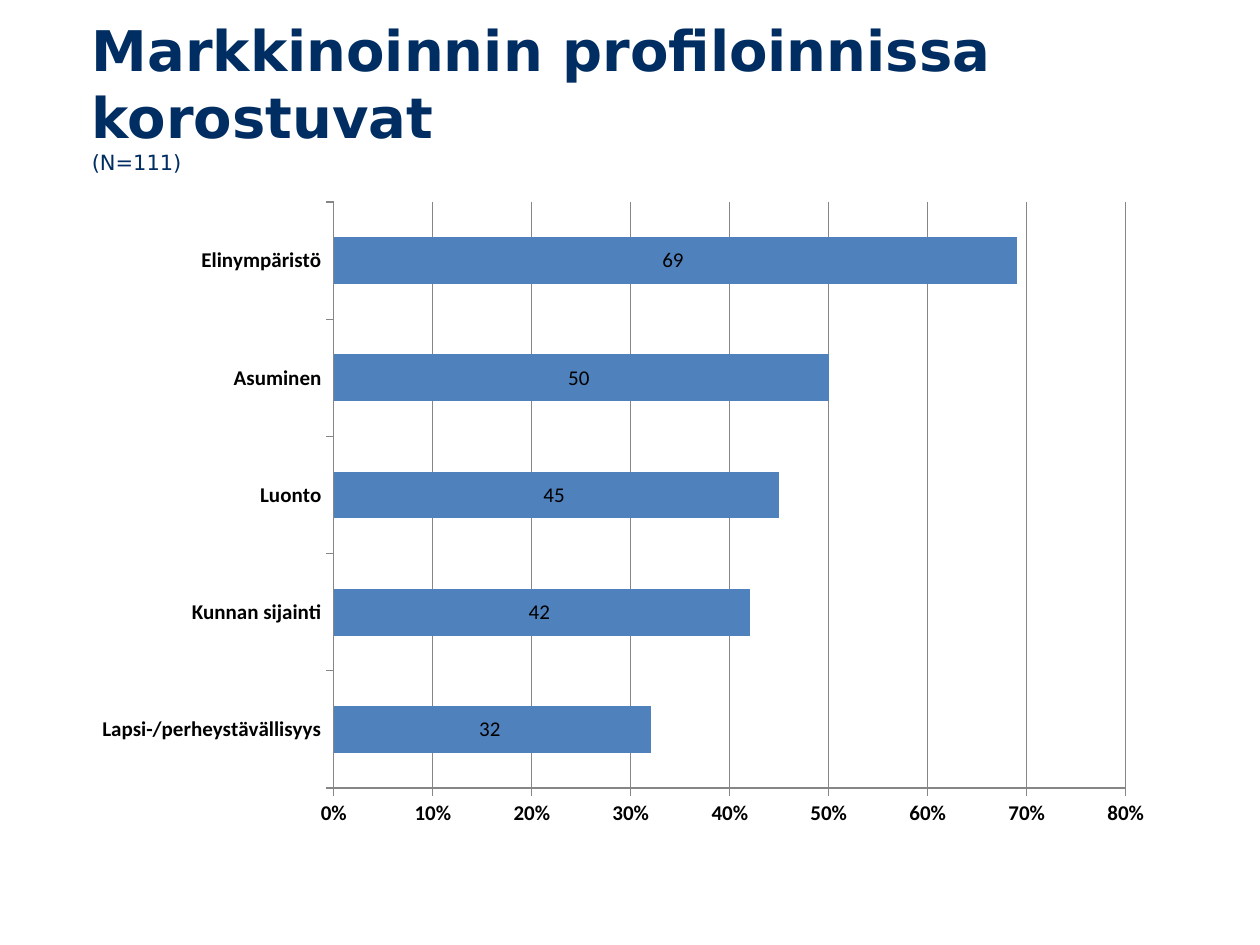
from lxml import etree
from pptx import Presentation
from pptx.chart.data import CategoryChartData as ChartData
from pptx.dml.color import RGBColor
from pptx.enum.chart import XL_CHART_TYPE as Kind
from pptx.enum.chart import XL_LABEL_POSITION as Place
from pptx.enum.chart import XL_TICK_MARK as Tick
from pptx.enum.text import MSO_ANCHOR as Anchor
from pptx.enum.text import MSO_AUTO_SIZE as Fit
from pptx.enum.text import PP_ALIGN as Align
from pptx.oxml.ns import qn
from pptx.util import Cm, Pt

TITLE = "Markkinoinnin profiloinnissa korostuvat"
NOTE = "(N=111)"
SHARES = [
    ("Lapsi-/perheystävällisyys", 0.32),
    ("Kunnan sijainti", 0.42),
    ("Luonto", 0.45),
    ("Asuminen", 0.5),
    ("Elinympäristö", 0.69),
]
PLOT = {"x": 0.23, "y": 0.02, "w": 0.73, "h": 0.9}

NAVY = RGBColor(0x00, 0x2D, 0x62)
BLUE = RGBColor(0x4F, 0x81, 0xBD)
GRAY = RGBColor(0x86, 0x86, 0x86)
BLACK = RGBColor(0x00, 0x00, 0x00)


def style(font, size=12, bold=False, color=BLACK, name="Calibri"):
    font.size, font.bold, font.name = Pt(size), bold, name
    font.color.rgb = color


def write(para, text, **form):
    run = para.add_run()
    run.text = text
    style(run.font, **form)


def rule(line):
    line.color.rgb = GRAY
    line.width = Pt(0.75)


def fix_plot(chart, parts):
    """Place the inner plot area by fractions of the chart frame."""
    area = chart.plots[0]._element.getparent()
    for old in area.findall(qn("c:layout")):
        area.remove(old)
    layout = etree.Element(qn("c:layout"))
    area.insert(0, layout)
    manual = etree.SubElement(layout, qn("c:manualLayout"))
    modes = {"layoutTarget": "inner", "xMode": "edge", "yMode": "edge"}
    for tag, val in {**modes, **parts}.items():
        etree.SubElement(manual, qn("c:" + tag)).set("val", str(val))


def add_title(slide):
    title = slide.shapes.title
    title.left, title.top = Cm(1.85), Cm(0.25)
    title.width, title.height = Cm(21.67), Cm(3.33)
    frame = title.text_frame
    frame.margin_left = frame.margin_right = 0
    frame.margin_top = frame.margin_bottom = 0
    frame.word_wrap, frame.auto_size = True, Fit.NONE
    frame.vertical_anchor = Anchor.MIDDLE
    para = frame.paragraphs[0]
    para.alignment = Align.LEFT
    look = {"color": NAVY, "name": "DejaVu Sans"}
    write(para, TITLE, size=32, bold=True, **look)
    para.add_line_break()
    write(para, NOTE, **look)


def add_bars(slide):
    data = ChartData()
    data.categories = [name for name, _ in SHARES]
    data.add_series("Series 1", [share for _, share in SHARES], "0%")
    chart = slide.shapes.add_chart(
        Kind.BAR_CLUSTERED, Cm(1.7), Cm(3.81), Cm(21.87), Cm(13.13), data
    ).chart
    chart.has_legend = chart.has_title = False
    style(chart.font, bold=True)
    fix_plot(chart, PLOT)

    for axis in (chart.category_axis, chart.value_axis):
        axis.major_tick_mark, axis.minor_tick_mark = Tick.OUTSIDE, Tick.NONE
        rule(axis.format.line)
    scale = chart.value_axis
    scale.minimum_scale, scale.maximum_scale, scale.major_unit = 0, 0.8, 0.1
    scale.tick_labels.number_format = "0%"
    scale.tick_labels.number_format_is_linked = False
    scale.has_major_gridlines = True
    rule(scale.major_gridlines.format.line)

    plot = chart.plots[0]
    plot.gap_width, plot.vary_by_categories = 150, False
    bars = plot.series[0]
    bars.format.fill.solid()
    bars.format.fill.fore_color.rgb = BLUE
    labels = bars.data_labels
    labels.show_value, labels.position = True, Place.CENTER
    labels.number_format, labels.number_format_is_linked = "0%", False
    style(labels.font)
    for i, (_, share) in enumerate(SHARES):
        label = bars.points[i].data_label
        write(label.text_frame.paragraphs[0], f"{share * 100:.0f} ")
        label.position = Place.CENTER


def main():
    deck = Presentation()
    deck.slide_width, deck.slide_height = Cm(25.4), Cm(19.05)
    slide = deck.slides.add_slide(deck.slide_layouts[5])
    add_title(slide)
    add_bars(slide)
    deck.save("out.pptx")


if __name__ == "__main__":
    main()
